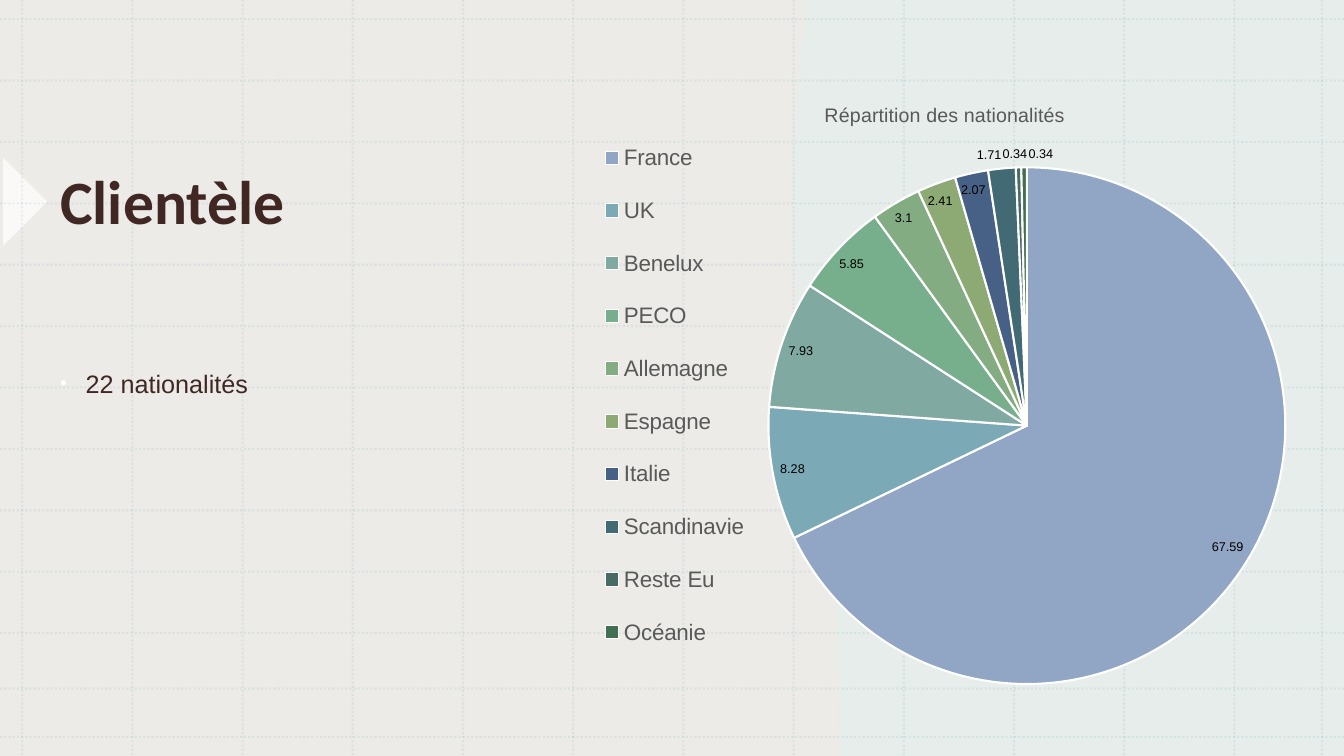
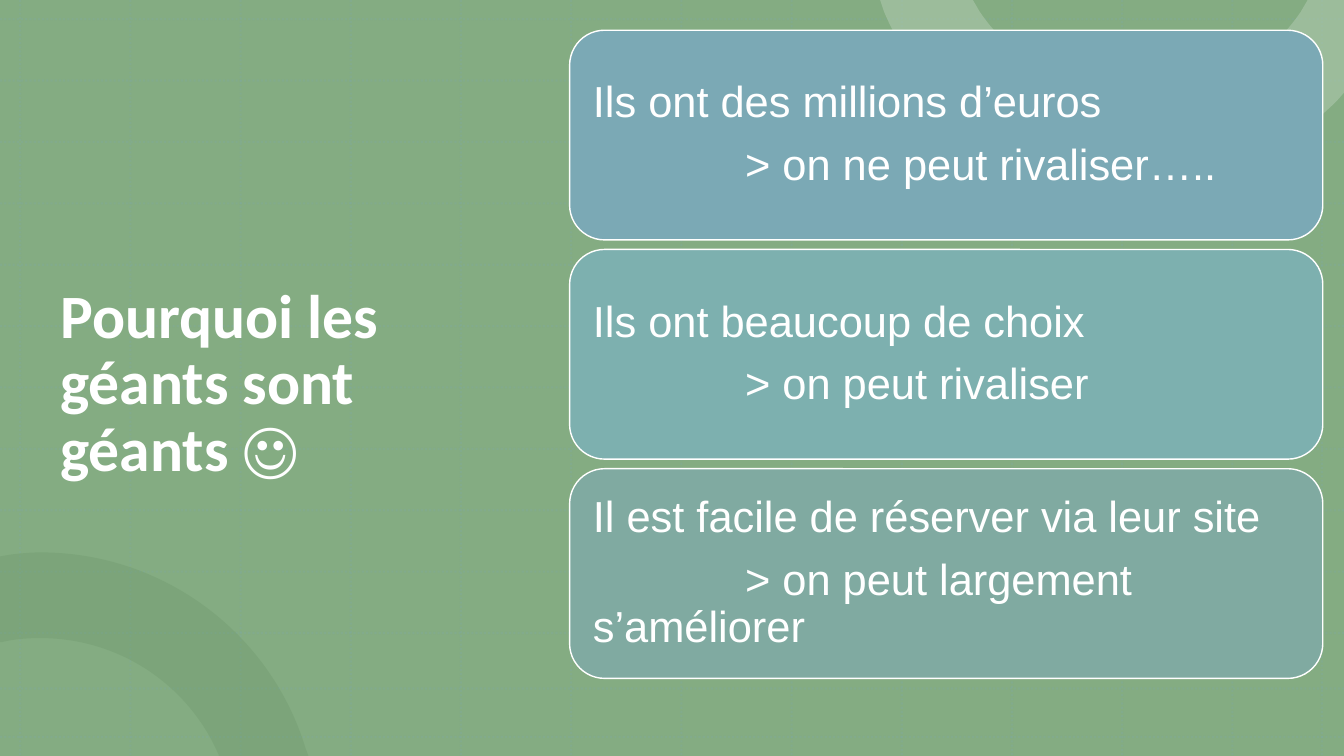
from lxml.etree import SubElement
from pptx import Presentation
from pptx.chart.data import CategoryChartData
from pptx.dml.color import RGBColor
from pptx.enum.chart import XL_CHART_TYPE, XL_LABEL_POSITION, XL_LEGEND_POSITION
from pptx.enum.dml import MSO_LINE
from pptx.enum.shapes import MSO_CONNECTOR, MSO_SHAPE
from pptx.enum.text import MSO_ANCHOR, PP_ALIGN
from pptx.oxml.ns import qn
from pptx.util import Inches, Pt

WIDTH, HEIGHT = 13.33, 7.5
TITLE_FONT, BODY_FONT = "Calibri", "Arial"
COLORS = {
    "sand": "E8E6E2", "mist": "E6EEEC", "green": "84AC82", "white": "FFFFFF",
    "brown": "412724", "grid": "7BA9B5", "dark_arc": "5D885A",
    "light_arc": "B5CDB4", "grey": "595959", "black": "000000",
}
NATIONALITIES = [
    ("France", 67.59, "91A5C4"), ("UK", 8.28, "7BA9B5"),
    ("Benelux", 7.93, "80AAA1"), ("PECO", 5.85, "77AE8B"),
    ("Allemagne", 3.1, "84AC82"), ("Espagne", 2.41, "8DAA74"),
    ("Italie", 2.07, "476085"), ("Scandinavie", 1.71, "426A75"),
    ("Reste Eu", 0.34, "486B64"), ("Océanie", 0.34, "426E52"),
]
REASONS = [
    ("Ils ont des millions d’euros", "> on ne peut rivaliser…..", "7BA9B5"),
    ("Ils ont beaucoup de choix", "> on peut rivaliser", "7DB0AF"),
    ("Il est facile de réserver via leur site",
     "> on peut largement s’améliorer", "80AAA1"),
]

# Outlines: a pair is a corner, three pairs are a Bézier curve
PANEL = [(13.33, 0), (13.33, 7.5), (8.33, 7.5),
         ((8.33, 3.76), (7.57, 3.76), (8, 0))]
BOTTOM_ARC = [(0.4, 5.48), ((1.64, 5.48), (2.69, 6.3), (3.03, 7.42)),
              (3.06, 7.5), (2.17, 7.5), (2.17, 7.49),
              ((1.88, 6.81), (1.2, 6.33), (0.4, 6.33)),
              ((0.27, 6.33), (0.14, 6.34), (0.02, 6.37)), (0, 6.37),
              (0, 5.52), (0.12, 5.5), ((0.21, 5.49), (0.31, 5.48), (0.4, 5.48))]
TOP_ARC = [(8.73, 0), (9.65, 0), (9.72, 0.12),
           ((10.07, 0.63), (10.65, 0.96), (11.31, 0.96)),
           ((11.97, 0.96), (12.55, 0.63), (12.9, 0.12)), (12.97, 0),
           (13.33, 0), (13.33, 0.92), (13.26, 1),
           ((12.76, 1.5), (12.07, 1.81), (11.31, 1.81)),
           ((10.17, 1.81), (9.19, 1.11), (8.77, 0.12))]


def rgb(color):
    return RGBColor.from_string(COLORS.get(color, color))


def set_font(font, name, size, color, bold=False):
    font.name, font.size, font.bold = name, Pt(size), bold
    font.color.rgb = rgb(color)


def set_alpha(element, percent):
    color = element.find(".//" + qn("a:srgbClr"))
    SubElement(color, qn("a:alpha"), val=str(percent * 1000))


def paint(shape, color, alpha=100):
    shape.shadow.inherit = False
    shape.fill.solid()
    shape.fill.fore_color.rgb = rgb(color)
    shape.line.fill.background()
    if alpha < 100:
        set_alpha(shape.element.spPr, alpha)


def new_slide(deck, color, alpha=100):
    slide = deck.slides.add_slide(deck.slide_layouts[6])
    backdrop = slide.shapes.add_shape(
        MSO_SHAPE.RECTANGLE, 0, 0, Inches(WIDTH), Inches(HEIGHT))
    paint(backdrop, color, alpha)
    return slide


def add_outline(slide, outline, color, alpha):
    steps = [step if isinstance(step[0], tuple) else (step,) for step in outline]
    points = [(Inches(x), Inches(y)) for step in steps for x, y in step]
    builder = slide.shapes.build_freeform(*points[0], scale=1.0)
    builder.add_line_segments(points[1:], close=False)
    shape = builder.convert_to_shape()
    # Join each run of three control points into one curve
    contour = shape.element.find(".//" + qn("a:moveTo")).getparent()
    segments = iter(contour.findall(qn("a:lnTo")))
    for step in steps[1:]:
        parts = [next(segments) for _ in step]
        if len(parts) == 3:
            curve = SubElement(contour, qn("a:cubicBezTo"))
            contour.replace(parts[0], curve)
            for part in parts:
                curve.append(part.find(qn("a:pt")))
            for part in parts[1:]:
                contour.remove(part)
    SubElement(contour, qn("a:close"))
    paint(shape, color, alpha)


def add_grid(slide, left, alpha):
    columns = [left + 1.093 * i for i in range(12)] + [13.11]
    rows = [0.19 + 0.609 * i for i in range(11)] + [6.83, 7.31]
    ends = [(x, 0, x, HEIGHT) for x in columns]
    ends += [(0, y, WIDTH, y) for y in rows]
    for end in ends:
        rule = slide.shapes.add_connector(MSO_CONNECTOR.STRAIGHT, *map(Inches, end))
        rule.line.color.rgb = rgb("grid")
        rule.line.width = Pt(1.5)
        rule.line.dash_style = MSO_LINE.ROUND_DOT
        set_alpha(rule.element.spPr, alpha)
        SubElement(rule.element.spPr, qn("a:effectLst"))


def add_text(slide, box, text, anchor):
    frame = slide.shapes.add_textbox(*map(Inches, box)).text_frame
    frame.word_wrap = True
    frame.vertical_anchor = anchor
    frame.text = text
    return frame.paragraphs[0]


def add_title(slide, box, text, color):
    title = add_text(slide, box, text, MSO_ANCHOR.MIDDLE)
    title.line_spacing = 0.9
    set_font(title.font, TITLE_FONT, 44, color, bold=True)


def add_bullet(slide, box, text):
    item = add_text(slide, box, text, MSO_ANCHOR.TOP)
    item.line_spacing = 1.1
    item.space_before = Pt(10)
    set_font(item.font, BODY_FONT, 18, "brown")
    properties = item._p.get_or_add_pPr()
    properties.set("marL", str(Inches(0.25)))
    properties.set("indent", str(Inches(-0.25)))
    bullet_color = SubElement(properties, qn("a:buClr"))
    SubElement(bullet_color, qn("a:srgbClr"), val=COLORS["white"])
    SubElement(properties, qn("a:buSzPct"), val="75000")
    SubElement(properties, qn("a:buFont"), typeface=BODY_FONT)
    SubElement(properties, qn("a:buChar"), char="•")
    # Default run properties come last in the schema
    properties.append(properties.find(qn("a:defRPr")))


def place_chart_part(chart, tag, index, inner=False, **fractions):
    part = chart.element.find(".//" + qn(tag))
    for old in part.findall(qn("c:layout")):
        part.remove(old)
    layout = SubElement(part, qn("c:layout"))
    part.insert(index, layout)
    manual = SubElement(layout, qn("c:manualLayout"))
    if inner:
        SubElement(manual, qn("c:layoutTarget"), val="inner")
    for axis in ("x", "y"):
        SubElement(manual, qn(f"c:{axis}Mode"), val="edge")
    for name, value in fractions.items():
        SubElement(manual, qn(f"c:{name}"), val=str(value))


def add_nationality_pie(slide):
    names, shares, colors = zip(*NATIONALITIES)
    data = CategoryChartData()
    data.categories = names
    data.add_series("Series 1", shares)
    box = map(Inches, (5.69, 0.8, 7.43, 6.06))
    chart = slide.shapes.add_chart(XL_CHART_TYPE.PIE, *box, data).chart
    set_font(chart.font, BODY_FONT, 10, "black")

    chart.has_title = True
    chart.chart_title.text_frame.text = "Répartition des nationalités"
    set_font(chart.chart_title.text_frame.paragraphs[0].font, BODY_FONT, 14, "grey")
    chart.has_legend = True
    chart.legend.position = XL_LEGEND_POSITION.LEFT
    chart.legend.include_in_layout = False
    set_font(chart.legend.font, BODY_FONT, 16, "grey")

    pie = chart.plots[0]
    pie.vary_by_categories = True
    for i, color in enumerate(colors):
        slice_format = pie.series[0].points[i].format
        slice_format.fill.solid()
        slice_format.fill.fore_color.rgb = rgb(color)
        slice_format.line.color.rgb = rgb("white")
        slice_format.line.width = Pt(1.5)
    pie.has_data_labels = True
    labels = pie.data_labels
    labels.show_value = True
    labels.show_percentage = False
    labels.position = XL_LABEL_POSITION.BEST_FIT
    set_font(labels.font, BODY_FONT, 9, "black")

    place_chart_part(chart, "c:title", 1, x=0.33, y=0.03)
    place_chart_part(chart, "c:legend", 1, x=0.03, y=0.06, w=0.21, h=0.91)
    place_chart_part(chart, "c:plotArea", 0, inner=True,
                     x=0.26, y=0.14, w=0.69, h=0.85)


def add_reason(slide, top, claim, answer, color):
    box = map(Inches, (5.65, top, 7.47, 2.08))
    card = slide.shapes.add_shape(MSO_SHAPE.ROUNDED_RECTANGLE, *box)
    paint(card, color)
    card.line.color.rgb = rgb("white")
    card.line.width = Pt(1)
    frame = card.text_frame
    frame.word_wrap = True
    frame.vertical_anchor = MSO_ANCHOR.MIDDLE
    frame.margin_left = frame.margin_right = Inches(0.13)
    frame.margin_top = frame.margin_bottom = Inches(0.13)
    frame.text = f"{claim}\n{answer}"
    for paragraph in frame.paragraphs:
        paragraph.alignment = PP_ALIGN.LEFT
        paragraph.line_spacing = 0.9
        paragraph.space_after = Pt(11)
        set_font(paragraph.font, BODY_FONT, 31, "white")
    # Only the first line of the answer is indented
    frame.paragraphs[1]._p.get_or_add_pPr().set("indent", str(Inches(1.51)))


def build_clients(deck):
    slide = new_slide(deck, "sand", 80)
    pointer = slide.shapes.add_shape(
        MSO_SHAPE.RIGHT_TRIANGLE, *map(Inches, (-0.28, 1.69, 0.62, 0.62)))
    pointer.rotation = 225
    paint(pointer, "white", 75)
    add_outline(slide, PANEL, "mist", 80)
    add_grid(slide, 0.22, 15)
    add_title(slide, (0.5, 0.8, 4.83, 2.45), "Clientèle", "brown")
    add_bullet(slide, (0.5, 3.57, 4.83, 3.26), "22 nationalités")
    add_nationality_pie(slide)


def build_giants(deck):
    slide = new_slide(deck, "green")
    add_grid(slide, 0.2, 20)
    add_outline(slide, BOTTOM_ARC, "dark_arc", 20)
    add_outline(slide, TOP_ARC, "light_arc", 50)
    add_title(slide, (0.5, 0.79, 4.08, 6.05),
              "Pourquoi les géants sont géants ☺", "white")
    for i, reason in enumerate(REASONS):
        add_reason(slide, 0.3 + 2.175 * i, *reason)


def main():
    deck = Presentation()
    deck.slide_width, deck.slide_height = Inches(WIDTH), Inches(HEIGHT)
    build_clients(deck)
    build_giants(deck)
    deck.save("out.pptx")


if __name__ == "__main__":
    main()
